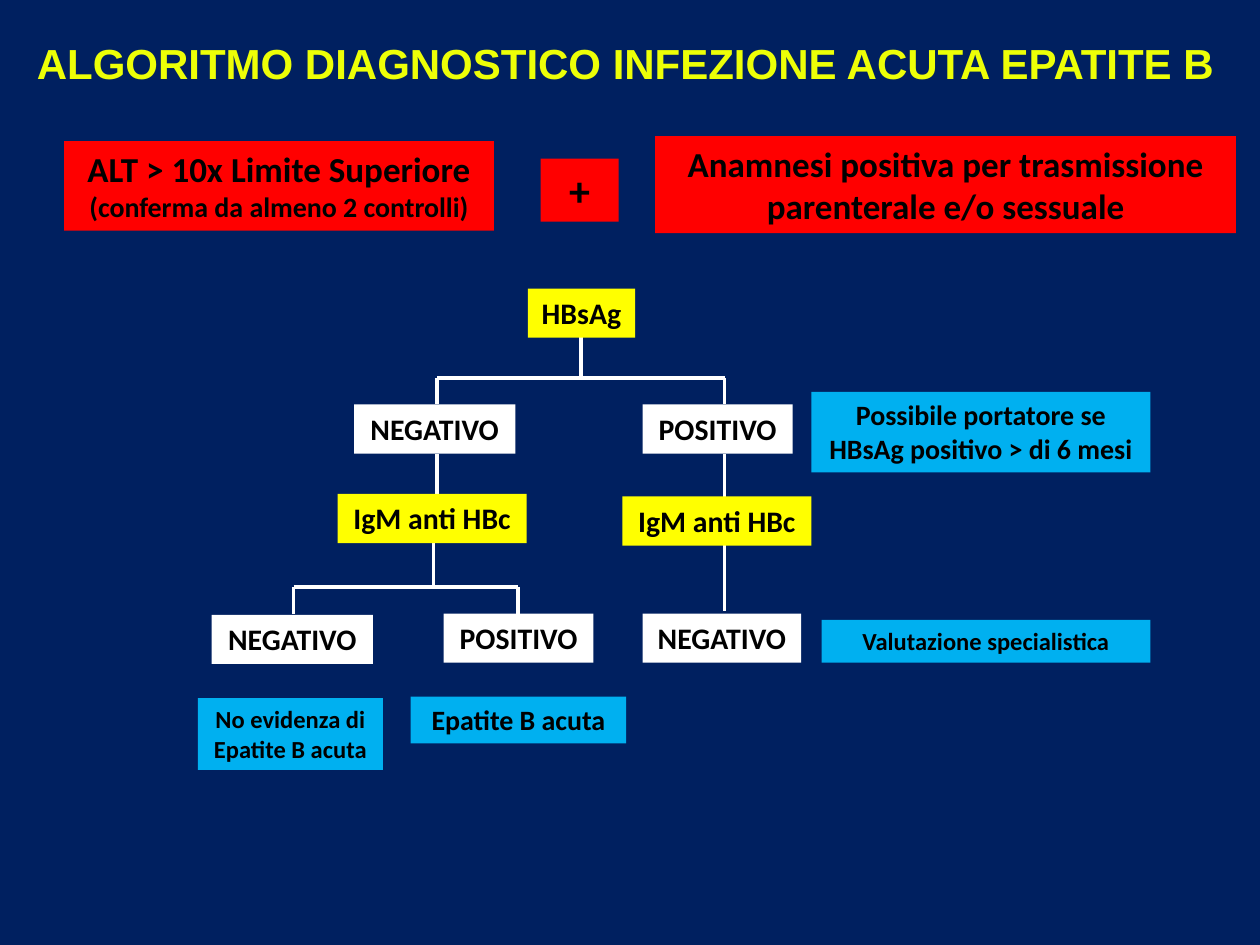
from dataclasses import dataclass

from lxml.etree import SubElement
from pptx import Presentation
from pptx.dml.color import RGBColor
from pptx.enum.shapes import MSO_CONNECTOR as Connector, MSO_SHAPE as Shape
from pptx.enum.text import MSO_ANCHOR as Anchor, MSO_AUTO_SIZE as AutoSize, PP_ALIGN as Align
from pptx.oxml.ns import qn
from pptx.slide import Slide
from pptx.text.text import _Paragraph as Paragraph
from pptx.util import Inches, Pt

NAVY = RGBColor(0x00, 0x20, 0x60)
LIME = RGBColor(0xED, 0xFF, 0x07)
RED = RGBColor(0xFF, 0x00, 0x00)
YELLOW = RGBColor(0xFF, 0xFF, 0x00)
WHITE = RGBColor(0xFF, 0xFF, 0xFF)
SKY = RGBColor(0x00, 0xB0, 0xF0)
BLACK = RGBColor(0x00, 0x00, 0x00)


@dataclass(frozen=True)
class Line:
    text: str
    size: float


@dataclass(frozen=True)
class Box:
    left: float
    top: float
    width: float
    height: float
    fill: RGBColor
    lines: tuple[Line, ...]


@dataclass(frozen=True)
class Fork:
    stem: float
    top: float
    bar: float
    bottom: float
    branches: tuple[float, float]


@dataclass(frozen=True)
class Link:
    x: float
    top: float
    bottom: float


def node(left: float, top: float, width: float, fill: RGBColor, text: str) -> Box:
    return Box(left, top, width, 0.39, fill, (Line(text, 17),))


CRITERIA = (
    Box(0.51, 1.12, 3.41, 0.71, RED,
        (Line("ALT > 10x Limite Superiore", 20), Line("(conferma da almeno 2 controlli)", 16))),
    Box(5.2, 1.08, 4.61, 0.77, RED,
        (Line("Anamnesi positiva per trasmissione parenterale e/o sessuale", 20),)),
    Box(4.29, 1.26, 0.62, 0.5, RED, (Line("+", 24),)),
)

TESTS = (
    node(4.19, 2.29, 0.85, YELLOW, "HBsAg"),
    node(2.68, 3.92, 1.5, YELLOW, "IgM anti HBc"),
    node(4.94, 3.94, 1.5, YELLOW, "IgM anti HBc"),
)

RESULTS = (
    node(5.1, 3.21, 1.19, WHITE, "POSITIVO"),
    node(2.81, 3.21, 1.28, WHITE, "NEGATIVO"),
    node(1.68, 4.88, 1.28, WHITE, "NEGATIVO"),
    node(3.52, 4.87, 1.19, WHITE, "POSITIVO"),
    node(5.1, 4.87, 1.26, WHITE, "NEGATIVO"),
)

CONCLUSIONS = (
    Box(6.44, 3.11, 2.69, 0.64, SKY,
        (Line("Possibile portatore se HBsAg positivo > di 6 mesi", 16),)),
    Box(1.57, 5.54, 1.47, 0.57, SKY, (Line("No evidenza di Epatite B acuta", 14),)),
    Box(3.26, 5.53, 1.71, 0.37, SKY, (Line("Epatite B acuta", 16),)),
    Box(6.52, 4.92, 2.61, 0.34, SKY, (Line("Valutazione specialistica", 14),)),
)

FORKS = (
    Fork(4.61, 2.67, 3, 3.21, (3.47, 5.75)),
    Fork(3.44, 4.31, 4.66, 4.87, (2.33, 4.11)),
)

LINKS = (Link(5.75, 3.6, 3.95), Link(3.47, 3.6, 3.92), Link(5.75, 4.32, 4.85))


def add_span(para: Paragraph, line: Line, font: str, color: RGBColor) -> None:
    para.alignment = Align.CENTER
    span = para.add_run()
    span.text = line.text
    span.font.name = font
    span.font.size = Pt(line.size)
    span.font.bold = True
    span.font.color.rgb = color


def add_title(page: Slide, text: str) -> None:
    title = page.shapes.title
    title.left, title.top = Inches(0.1), Inches(0.29)
    title.width, title.height = Inches(9.73), Inches(0.46)
    frame = title.text_frame
    frame.word_wrap = True
    frame.auto_size = AutoSize.SHAPE_TO_FIT_TEXT
    frame.vertical_anchor = Anchor.MIDDLE
    para = frame.paragraphs[0]
    para.line_spacing = 0.9
    add_span(para, Line(text, 24), "Arial", LIME)


def add_box(page: Slide, box: Box) -> None:
    shape = page.shapes.add_shape(
        Shape.RECTANGLE, Inches(box.left), Inches(box.top), Inches(box.width), Inches(box.height))
    shape.shadow.inherit = False
    shape.fill.solid()
    shape.fill.fore_color.rgb = box.fill
    shape.line.fill.background()
    frame = shape.text_frame
    frame.word_wrap = True
    frame.auto_size = AutoSize.SHAPE_TO_FIT_TEXT
    frame.vertical_anchor = Anchor.TOP
    frame.margin_left = frame.margin_right = Inches(0.05)
    for index, line in enumerate(box.lines):
        para = frame.add_paragraph() if index else frame.paragraphs[0]
        add_span(para, line, "Calibri", BLACK)


def add_line(page: Slide, x1: float, y1: float, x2: float, y2: float) -> None:
    line = page.shapes.add_connector(
        Connector.STRAIGHT, Inches(x1), Inches(y1), Inches(x2), Inches(y2))
    line.line.color.rgb = WHITE
    line.line.width = Pt(2)
    SubElement(line._element.spPr, qn("a:effectLst"))


def add_fork(page: Slide, fork: Fork) -> None:
    left, right = fork.branches
    add_line(page, fork.stem, fork.top, fork.stem, fork.bar)
    add_line(page, left, fork.bar, right, fork.bar)
    for x in fork.branches:
        add_line(page, x, fork.bar, x, fork.bottom)


def main() -> None:
    deck = Presentation()
    deck.slide_width, deck.slide_height = Inches(10), Inches(7.5)
    page = deck.slides.add_slide(deck.slide_layouts[5])
    page.background.fill.solid()
    page.background.fill.fore_color.rgb = NAVY
    add_title(page, "ALGORITMO DIAGNOSTICO INFEZIONE ACUTA EPATITE B")
    for fork in FORKS:
        add_fork(page, fork)
    for link in LINKS:
        add_line(page, link.x, link.top, link.x, link.bottom)
    for box in CRITERIA + TESTS + RESULTS + CONCLUSIONS:
        add_box(page, box)
    deck.save("out.pptx")


if __name__ == "__main__":
    main()
